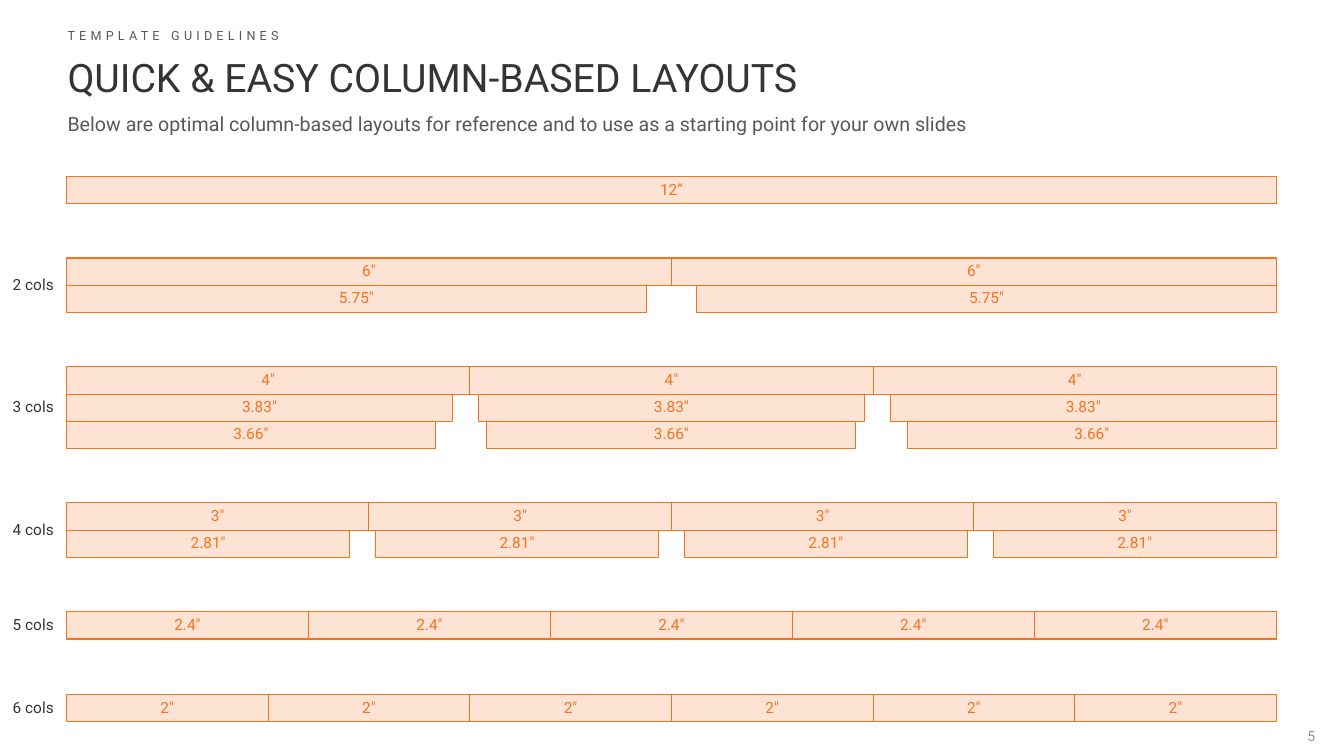
from pptx import Presentation
from pptx.dml.color import RGBColor
from pptx.enum.shapes import MSO_SHAPE
from pptx.enum.text import MSO_ANCHOR, MSO_AUTO_SIZE, PP_ALIGN
from pptx.util import Inches, Pt

COLORS = {
    "title": "343434",
    "body": "585855",
    "number": "8F8F8F",
    "accent": "F47321",
    "bar": "FDE3D3",
}
FONT = "Roboto"
GRID_LEFT = 0.66
GRID_WIDTH = 12
BAR_HEIGHT = 0.27

# Top of the group, number of columns, column widths from the first row down
COLUMN_GROUPS = [
    (1.75, 1, ["12”"]),
    (2.56, 2, ['6"', '5.75"']),
    (3.64, 3, ['4"', '3.83"', '3.66"']),
    (4.99, 4, ['3"', '2.81"']),
    (6.07, 5, ['2.4"']),
    (6.89, 6, ['2"']),
]


def rgb(name):
    return RGBColor.from_string(COLORS[name])


def write_text(shape, text, size, color, align=PP_ALIGN.LEFT, anchor=MSO_ANCHOR.TOP,
               line_spacing=None):
    """Fill a shape with one formatted run and return that run."""
    frame = shape.text_frame
    frame.word_wrap = True
    frame.auto_size = MSO_AUTO_SIZE.NONE
    frame.vertical_anchor = anchor
    paragraph = frame.paragraphs[0]
    paragraph.alignment = align
    paragraph.line_spacing = line_spacing
    run = paragraph.add_run()
    run.text = text
    run.font.size = Pt(size)
    run.font.name = FONT
    run.font.color.rgb = rgb(color)
    return run


def set_side_margins(shape, left, right):
    shape.text_frame.margin_left = Inches(left)
    shape.text_frame.margin_right = Inches(right)


def add_text_box(slide, left, top, width, height):
    return slide.shapes.add_textbox(Inches(left), Inches(top), Inches(width), Inches(height))


def add_heading(slide):
    title = slide.shapes.title
    title.left, title.top = Inches(0.67), Inches(0.5)
    title.width, title.height = Inches(12), Inches(0.5)
    set_side_margins(title, 0, 0)
    write_text(title, "QUICK & EASY COLUMN-BASED LAYOUTS", 28, "title", line_spacing=Pt(32))

    subtitle = add_text_box(slide, 0.67, 1.06, 12, 0.37)
    set_side_margins(subtitle, 0, 0)
    write_text(subtitle, "Below are optimal column-based layouts for reference and "
               "to use as a starting point for your own slides", 14, "body")

    section = add_text_box(slide, 0.67, 0.23, 12, 0.27)
    set_side_margins(section, 0, 0.1)
    run = write_text(section, "TEMPLATE GUIDELINES", 9, "body")
    run.font._element.set("spc", "300")


def add_bar(slide, left, top, width, text):
    bar = slide.shapes.add_shape(MSO_SHAPE.RECTANGLE, Inches(left), Inches(top),
                                 Inches(width), Inches(BAR_HEIGHT))
    bar.shadow.inherit = False
    bar.fill.solid()
    bar.fill.fore_color.rgb = rgb("bar")
    bar.line.color.rgb = rgb("accent")
    bar.line.width = Pt(0.75)
    write_text(bar, text, 11, "accent", PP_ALIGN.CENTER, MSO_ANCHOR.MIDDLE, 0.9)


def add_column_group(slide, top, columns, width_labels):
    """Stack rows of equal bars, each row spread over the full grid width."""
    for row, text in enumerate(width_labels):
        width = float(text[:-1])
        step = (GRID_WIDTH - width) / max(columns - 1, 1)
        for column in range(columns):
            add_bar(slide, GRID_LEFT + column * step, top + row * BAR_HEIGHT, width, text)
    if columns > 1:
        label = add_text_box(slide, 0, top, GRID_LEFT, BAR_HEIGHT * len(width_labels))
        write_text(label, f"{columns} cols", 11, "title", PP_ALIGN.CENTER,
                   MSO_ANCHOR.MIDDLE, 0.9)


def add_slide_number(slide, number):
    box = add_text_box(slide, 12.67, 7.1, 0.67, 0.4)
    set_side_margins(box, 0, 0)
    write_text(box, number, 10, "number", PP_ALIGN.CENTER, MSO_ANCHOR.MIDDLE)


def main():
    presentation = Presentation()
    presentation.slide_width = Inches(13.33)
    presentation.slide_height = Inches(7.5)
    slide = presentation.slides.add_slide(presentation.slide_layouts.get_by_name("Title Only"))
    add_heading(slide)
    for top, columns, width_labels in COLUMN_GROUPS:
        add_column_group(slide, top, columns, width_labels)
    add_slide_number(slide, "5")
    presentation.save("out.pptx")


if __name__ == "__main__":
    main()
